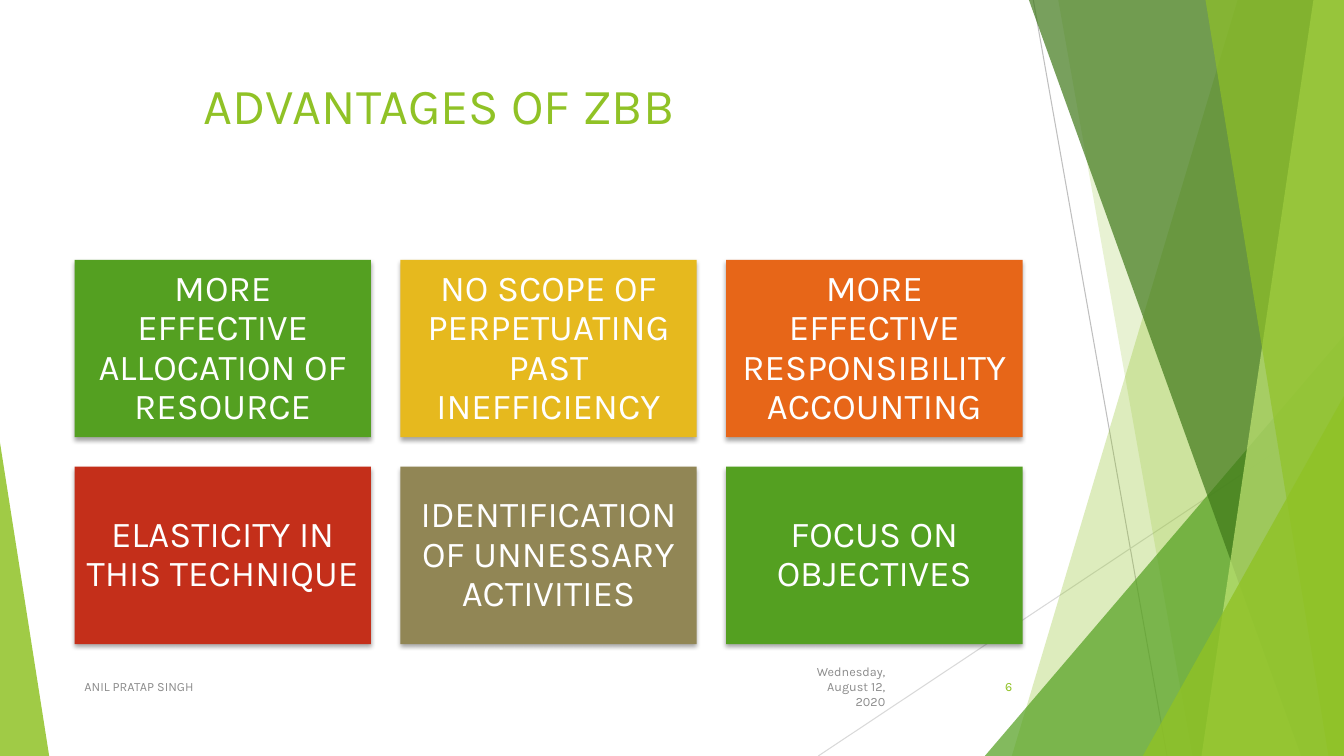
import pptx
import pptx.dml.color
import pptx.enum.shapes
import pptx.enum.text
import pptx.oxml
import pptx.oxml.ns
import pptx.util

Cm = pptx.util.Cm
Pt = pptx.util.Pt
ALIGN = pptx.enum.text.PP_ALIGN
MIDDLE = pptx.enum.text.MSO_ANCHOR.MIDDLE
SHAPES = pptx.enum.shapes.MSO_SHAPE
NAMESPACE = pptx.oxml.ns.nsdecls("a")

WIDTH, HEIGHT = 33.87, 19.05
LEFT = 1.88
LIME, GREEN, GREY = "90C226", "54A021", "8C8C8C"

CARDS = [
    ("MORE EFFECTIVE ALLOCATION OF RESOURCE", GREEN),
    ("NO SCOPE OF PERPETUATING PAST INEFFICIENCY", "E6B91E"),
    ("MORE EFFECTIVE RESPONSIBILITY ACCOUNTING", "E76618"),
    ("ELASTICITY IN THIS TECHNIQUE", "C42F1A"),
    ("IDENTIFICATION OF UNNESSARY ACTIVITIES", "918655"),
    ("FOCUS ON OBJECTIVES", GREEN),
]


def color(value):
    return pptx.dml.color.RGBColor.from_string(value)


class SlideBuilder:
    font = "Karla"

    def __init__(self, presentation):
        self.slide = presentation.slides.add_slide(presentation.slide_layouts[5])
        self.shapes = self.slide.shapes

    def paint(self, shape, value, opacity=100):
        shape.shadow.inherit = False
        shape.line.fill.background()
        shape.fill.solid()
        shape.fill.fore_color.rgb = color(value)
        if opacity < 100:
            fill = shape._element.spPr.find(pptx.oxml.ns.qn("a:solidFill"))
            fill[0].append(pptx.oxml.parse_xml(
                f'<a:alpha {NAMESPACE} val="{opacity * 1000}"/>'))

    def set_text(self, shape, text, size, value, align):
        frame = shape.text_frame
        frame.text = text
        frame.word_wrap = True
        frame.auto_size = pptx.enum.text.MSO_AUTO_SIZE.NONE
        frame.vertical_anchor = MIDDLE
        paragraph = frame.paragraphs[0]
        paragraph.alignment = align
        for run in paragraph.runs:
            run.font.name = self.font
            run.font.size = Pt(size)
            run.font.color.rgb = color(value)
        return paragraph

    def line(self, x1, y1, x2, y2, value):
        connector = self.shapes.add_connector(
            pptx.enum.shapes.MSO_CONNECTOR.STRAIGHT, Cm(x1), Cm(y1), Cm(x2), Cm(y2))
        connector.line.color.rgb = color(value)
        connector.line.width = Pt(0.75)
        connector._element.spPr.append(
            pptx.oxml.parse_xml(f"<a:effectLst {NAMESPACE}/>"))

    def band(self, top_x, bottom_x, value, opacity):
        builder = self.shapes.build_freeform(Cm(top_x), 0)
        builder.add_line_segments([
            (Cm(WIDTH), 0), (Cm(WIDTH), Cm(HEIGHT)), (Cm(bottom_x), Cm(HEIGHT))])
        self.paint(builder.convert_to_shape(), value, opacity)

    def triangle(self, left, width, height, apex, value, opacity):
        shape = self.shapes.add_shape(
            SHAPES.ISOSCELES_TRIANGLE, Cm(left), Cm(HEIGHT - height), Cm(width), Cm(height))
        shape.adjustments[0] = apex
        self.paint(shape, value, opacity)

    def title(self, text):
        title = self.shapes.title
        title.left, title.top, title.width, title.height = (
            Cm(LEFT), Cm(1.7), Cm(23.88), Cm(1.88))
        paragraph = self.set_text(title, text, 36, LIME, ALIGN.LEFT)
        properties = paragraph._p.get_or_add_pPr()
        properties.set("marL", str(Cm(3)))
        properties.set("indent", "0")

    def card(self, left, top, width, height, text, value):
        shape = self.shapes.add_shape(
            SHAPES.RECTANGLE, Cm(left), Cm(top), Cm(width), Cm(height))
        self.paint(shape, value)
        effects = shape._element.spPr.find(pptx.oxml.ns.qn("a:effectLst"))
        effects.append(pptx.oxml.parse_xml(
            f'<a:outerShdw {NAMESPACE} blurRad="{Pt(3)}" dist="{Pt(2)}" dir="5400000" '
            'rotWithShape="0"><a:srgbClr val="000000"><a:alpha val="35000"/>'
            '</a:srgbClr></a:outerShdw>'))
        frame = shape.text_frame
        frame.margin_left = frame.margin_right = Cm(0.28)
        frame.margin_top = frame.margin_bottom = Cm(0.28)
        paragraph = self.set_text(shape, text, 26, "FFFFFF", ALIGN.CENTER)
        paragraph.line_spacing = 0.9

    def footer(self, left, width, text, value, align):
        box = self.shapes.add_textbox(Cm(left), Cm(16.79), Cm(width), Cm(1.01))
        self.set_text(box, text, 9, value, align)


def main():
    presentation = pptx.Presentation()
    presentation.slide_width = Cm(WIDTH)
    presentation.slide_height = Cm(HEIGHT)
    builder = SlideBuilder(presentation)

    builder.line(26.04, 0, 29.41, HEIGHT, "BFBFBF")
    builder.line(WIDTH, 10.24, 20.62, HEIGHT, "D9D9D9")
    builder.band(31.19, 25.5, LIME, 30)
    builder.band(26.67, 30.05, LIME, 20)
    builder.triangle(24.82, 9.05, 10.59, 1, GREEN, 72)
    builder.band(25.93, 32.79, "3F7819", 70)
    builder.band(33.1, 30.28, "C0E474", 70)
    builder.band(30.38, 33.48, LIME, 65)
    builder.triangle(28.8, 5.07, 9.07, 1, LIME, 80)
    builder.triangle(0, 1.24, 7.9, 0, LIME, 85)

    builder.title("ADVANTAGES OF ZBB")
    width, height, gap = 7.47, 4.47, 0.74
    for index, (text, value) in enumerate(CARDS):
        row, column = divmod(index, 3)
        builder.card(LEFT + column * (width + gap), 6.55 + row * (height + gap),
                     width, height, text, value)

    builder.footer(20.02, 2.54, "Wednesday, August 12, 2020", GREY, ALIGN.RIGHT)
    builder.footer(LEFT, 17.5, "ANIL PRATAP SINGH", GREY, ALIGN.LEFT)
    builder.footer(23.85, 1.91, "6", LIME, ALIGN.RIGHT)
    presentation.save("out.pptx")


if __name__ == "__main__":
    main()
